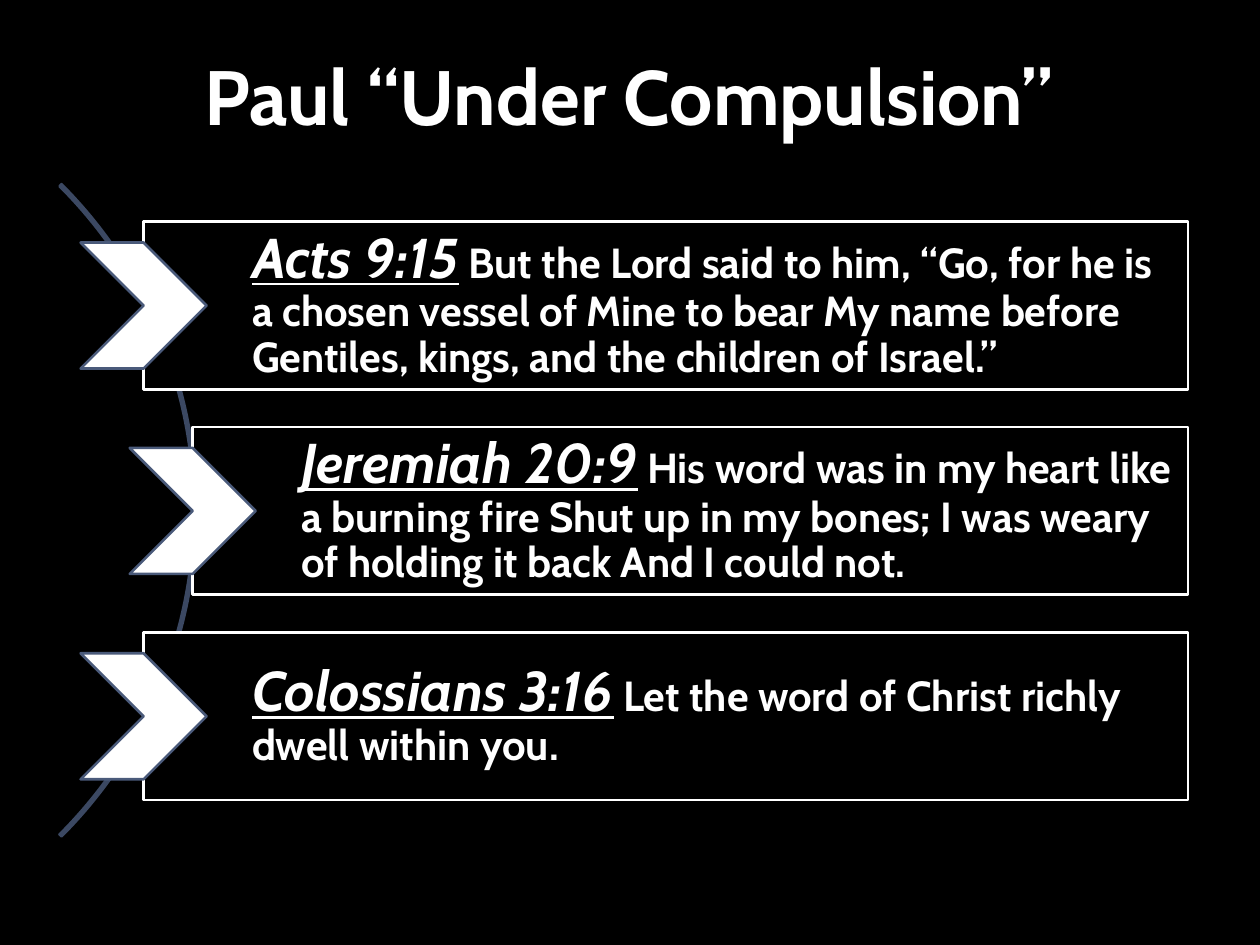
from pptx import Presentation
from pptx.dml.color import RGBColor
from pptx.enum.shapes import MSO_SHAPE as SHAPE
from pptx.enum.text import MSO_ANCHOR as ANCHOR, PP_ALIGN as ALIGN
from pptx.util import Inches, Pt

BLACK = RGBColor(0x00, 0x00, 0x00)
WHITE = RGBColor(0xFF, 0xFF, 0xFF)
ARC_BLUE = RGBColor(0x3B, 0x48, 0x62)
EDGE_BLUE = RGBColor(0x4A, 0x5A, 0x7A)

VERSES = [
    ("Acts 9:15", "But the Lord said to him, “Go, for he is a chosen vessel of Mine "
     "to bear My name before Gentiles, kings, and the children of Israel.”"),
    ("Jeremiah 20:9", "His word was in my heart like a burning fire Shut up in my bones; "
     "I was weary of holding it back And I could not."),
    ("Colossians 3:16", "Let the word of Christ richly dwell within you."),
]


def add_run(p, text, size=24, italic=False, underline=False):
    r = p.add_run()
    r.text = text
    r.font.name = "Cabin"
    r.font.size = Pt(size)
    r.font.bold = True
    r.font.italic = italic
    r.font.underline = underline
    r.font.color.rgb = WHITE


def add_outlined(kind, left, top, width, height, fill, line):
    s = slide.shapes.add_shape(kind, Inches(left), Inches(top), Inches(width), Inches(height))
    s.shadow.inherit = False
    s.fill.solid()
    s.fill.fore_color.rgb = fill
    s.line.color.rgb = line
    s.line.width = Pt(1.5)
    return s


prs = Presentation()
prs.slide_width, prs.slide_height = Inches(10), Inches(7.5)
slide = prs.slides.add_slide(prs.slide_layouts[5])
slide.background.fill.solid()
slide.background.fill.fore_color.rgb = BLACK

title = slide.shapes.title
title.left, title.top = Inches(0.39), Inches(0.25)
title.width, title.height = Inches(9.2), Inches(0.92)
title.text_frame.vertical_anchor = ANCHOR.BOTTOM
p = title.text_frame.paragraphs[0]
p.alignment = ALIGN.CENTER
p.space_before = Pt(4)
add_run(p, "Paul “Under Compulsion”", size=44)

arc = add_outlined(SHAPE.BLOCK_ARC, -5.76, 0.39, 7.32, 7.32, ARC_BLUE, ARC_BLUE)
# Angles run from 315 to 45 degrees; the last value is the thickness
for i, value in enumerate((189, 27, 0.003)):
    arc.adjustments[i] = value

RIGHT, TOP, PITCH, BOX_HEIGHT, CHEVRON = 9.43, 1.76, 1.63, 1.33, 1
for i, (reference, verse) in enumerate(VERSES):
    left = 1.53 if i == 1 else 1.14
    top = TOP + i * PITCH
    box = add_outlined(SHAPE.RECTANGLE, left, top, RIGHT - left, BOX_HEIGHT, BLACK, WHITE)
    tf = box.text_frame
    tf.word_wrap = True
    tf.vertical_anchor = ANCHOR.MIDDLE
    tf.margin_left = Inches(0.86)
    tf.margin_right = tf.margin_top = tf.margin_bottom = Inches(0.09)
    p = tf.paragraphs[0]
    p.alignment = ALIGN.LEFT
    p.line_spacing = 0.9
    add_run(p, reference, size=32, italic=True, underline=True)
    add_run(p, " " + verse)

    add_outlined(SHAPE.CHEVRON, left - CHEVRON / 2, top + (BOX_HEIGHT - CHEVRON) / 2,
                 CHEVRON, CHEVRON, WHITE, EDGE_BLUE)

prs.save("out.pptx")
